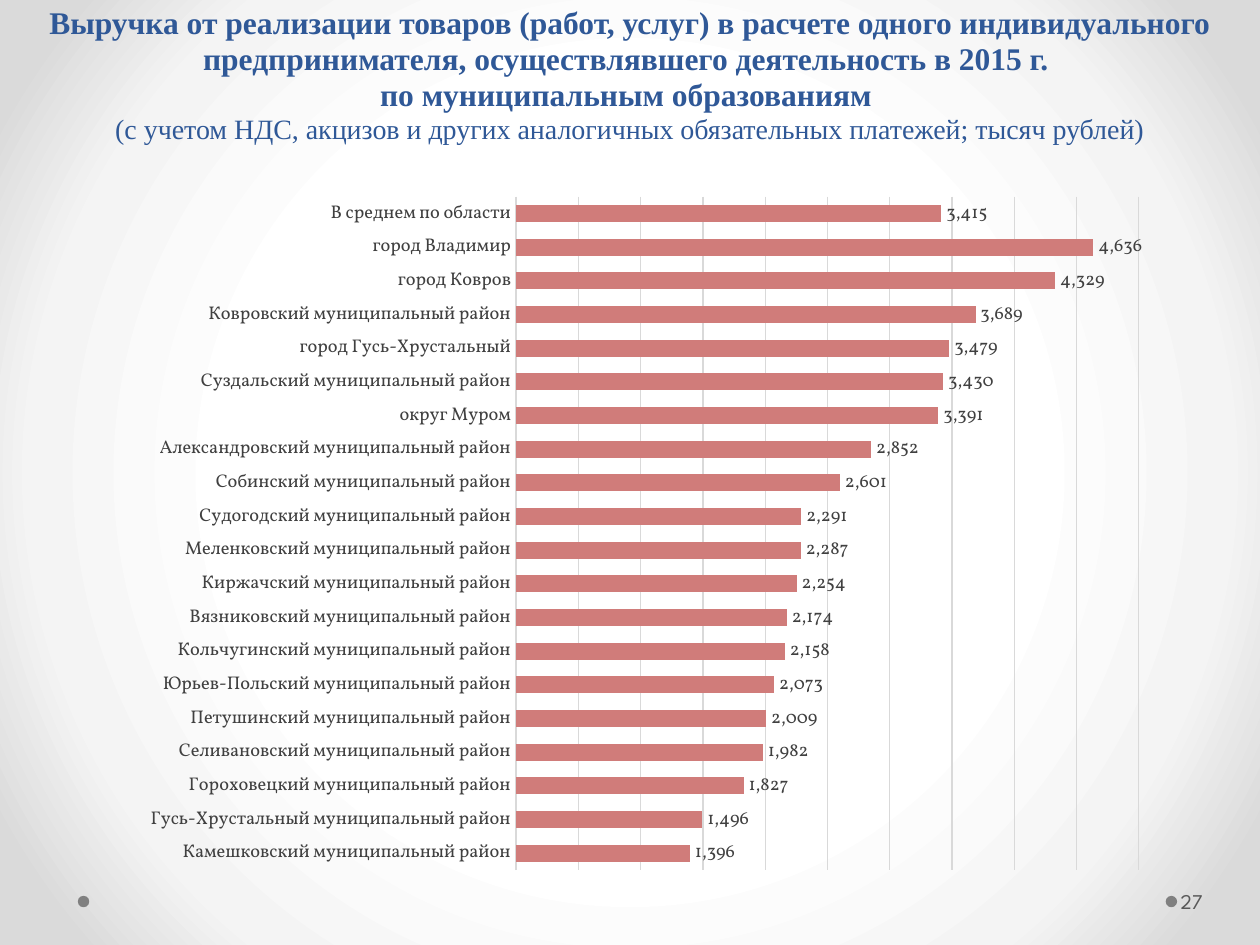
from lxml import etree
from pptx import Presentation
from pptx import util as u
from pptx.chart.data import CategoryChartData
from pptx.dml.color import RGBColor
from pptx.enum import chart as ch, shapes, text
from pptx.oxml import parse_xml
from pptx.oxml.ns import nsdecls, qn

# Content
HEADING = [
    ("Выручка от реализации товаров (работ, услуг) в расчете одного индивидуального "
     "предпринимателя, осуществлявшего деятельность в 2015 г. ", 18, True),
    ("по муниципальным образованиям ", 18, True),
    ("(с учетом НДС, акцизов и других аналогичных обязательных платежей; тысяч рублей)", 16, False),
]
DISTRICT = " муниципальный район"
REVENUE = [
    ("В среднем по области", 3415),
    ("город Владимир", 4636),
    ("город Ковров", 4329),
    ("Ковровский" + DISTRICT, 3689),
    ("город Гусь-Хрустальный", 3479),
    ("Суздальский" + DISTRICT, 3430),
    ("округ Муром", 3391),
    ("Александровский" + DISTRICT, 2852),
    ("Собинский" + DISTRICT, 2601),
    ("Судогодский" + DISTRICT, 2291),
    ("Меленковский" + DISTRICT, 2287),
    ("Киржачский" + DISTRICT, 2254),
    ("Вязниковский" + DISTRICT, 2174),
    ("Кольчугинский" + DISTRICT, 2158),
    ("Юрьев-Польский" + DISTRICT, 2073),
    ("Петушинский" + DISTRICT, 2009),
    ("Селивановский" + DISTRICT, 1982),
    ("Гороховецкий" + DISTRICT, 1827),
    ("Гусь-Хрустальный" + DISTRICT, 1496),
    ("Камешковский" + DISTRICT, 1396),
]
PAGE = "27"
COLORS = {"heading": "2F5897", "bar": "D07C7A", "label": "404040", "grid": "D9D9D9",
          "dot": "808080", "page": "595959", "chart": "000000"}
BACKDROP = [(50, "FFFFFF"), (76, "F4F4F4"), (92, "DADADA")]
PLOT = {"x": 0.394, "y": 0.165, "w": 0.58, "h": 0.787}


def color(name):
    return RGBColor.from_string(COLORS[name])


def style(font, face, size, tint, bold=False):
    font.name, font.size, font.bold = face, u.Pt(size), bold
    font.color.rgb = color(tint)


def style_line(line, width):
    line.color.rgb = color("grid")
    line.width = u.Pt(width)


deck = Presentation()
deck.slide_width, deck.slide_height = u.Cm(25.4), u.Cm(19.05)
slide = deck.slides.add_slide(deck.slide_layouts[6])

# Radial background
stops = "".join(f'<a:gs pos="{pos * 1000}"><a:srgbClr val="{tint}"/></a:gs>' for pos, tint in BACKDROP)
slide.element.cSld.insert(0, parse_xml(
    f'<p:bg {nsdecls("p", "a")}><p:bgPr><a:gradFill rotWithShape="1"><a:gsLst>{stops}</a:gsLst>'
    '<a:path path="circle"><a:fillToRect l="50000" t="50000" r="50000" b="50000"/></a:path>'
    '</a:gradFill><a:effectLst/></p:bgPr></p:bg>'))

# Footer dots
for left in (23.5, 1.57):
    dot = slide.shapes.add_shape(shapes.MSO_SHAPE.OVAL, u.Cm(left), u.Cm(18.06), u.Cm(0.23), u.Cm(0.23))
    dot.shadow.inherit = False
    dot.fill.solid()
    dot.fill.fore_color.rgb = color("dot")
    dot.line.fill.background()

# Heading
heading = slide.shapes.add_textbox(0, 0, deck.slide_width, u.Cm(3.18)).text_frame
heading.word_wrap = True
heading.auto_size = text.MSO_AUTO_SIZE.SHAPE_TO_FIT_TEXT
heading.text = "\n".join(line for line, _, _ in HEADING)
for paragraph, (_, size, bold) in zip(heading.paragraphs, HEADING):
    paragraph.alignment = text.PP_ALIGN.CENTER
    paragraph.line_spacing = 0.95
    style(paragraph.runs[0].font, "Times New Roman", size, "heading", bold)

# Revenue chart
data = CategoryChartData(number_format="#,##0")
data.categories = [place for place, _ in REVENUE]
data.add_series("Series 1", [amount for _, amount in REVENUE])
revenue = slide.shapes.add_chart(ch.XL_CHART_TYPE.BAR_CLUSTERED, u.Cm(1.88), u.Cm(1.12),
                                 u.Cm(21.64), u.Cm(17.25), data).chart
revenue.has_legend = revenue.has_title = False
style(revenue.font, "Vollkorn", 8, "chart")

places = revenue.category_axis
places.reverse_order = True
places.major_tick_mark = places.minor_tick_mark = ch.XL_TICK_MARK.NONE
style(places.tick_labels.font, "Vollkorn", 10.5, "label")
style_line(places.format.line, 1)

amounts = revenue.value_axis
amounts.visible = False
amounts.minimum_scale, amounts.maximum_scale, amounts.major_unit = 0, 5000, 500
amounts.has_major_gridlines = True
style_line(amounts.major_gridlines.format.line, 0.75)

# Bars and their values
plot = revenue.plots[0]
plot.gap_width, plot.overlap, plot.vary_by_categories = 97, -20, False
bars = plot.series[0]
bars.invert_if_negative = False
bars.format.fill.solid()
bars.format.fill.fore_color.rgb = color("bar")
values = bars.data_labels
values.show_value = True
values.number_format, values.number_format_is_linked = "#,##0", False
values.position = ch.XL_LABEL_POSITION.OUTSIDE_END
style(values.font, "Vollkorn", 10.5, "label")

# Fixed inner plot area
plot_area = revenue.element.find(".//" + qn("c:plotArea"))
for old_layout in plot_area.findall(qn("c:layout")):
    plot_area.remove(old_layout)
layout = etree.Element(qn("c:layout"))
manual = etree.SubElement(layout, qn("c:manualLayout"))
settings = [("layoutTarget", "inner"), ("xMode", "edge"), ("yMode", "edge"), *PLOT.items()]
for tag, value in settings:
    etree.SubElement(manual, qn("c:" + tag)).set("val", str(value))
plot_area.insert(0, layout)

# Page number
page = slide.shapes.add_textbox(u.Cm(23.72), u.Cm(17.65), u.Cm(1.55), u.Cm(1.02)).text_frame
page.word_wrap = True
page.vertical_anchor = text.MSO_ANCHOR.MIDDLE
page.margin_left = u.Cm(0.08)
page.margin_right = u.Cm(0.13)
page.text = PAGE
style(page.paragraphs[0].runs[0].font, "League Spartan", 12, "page")

deck.save("out.pptx")
